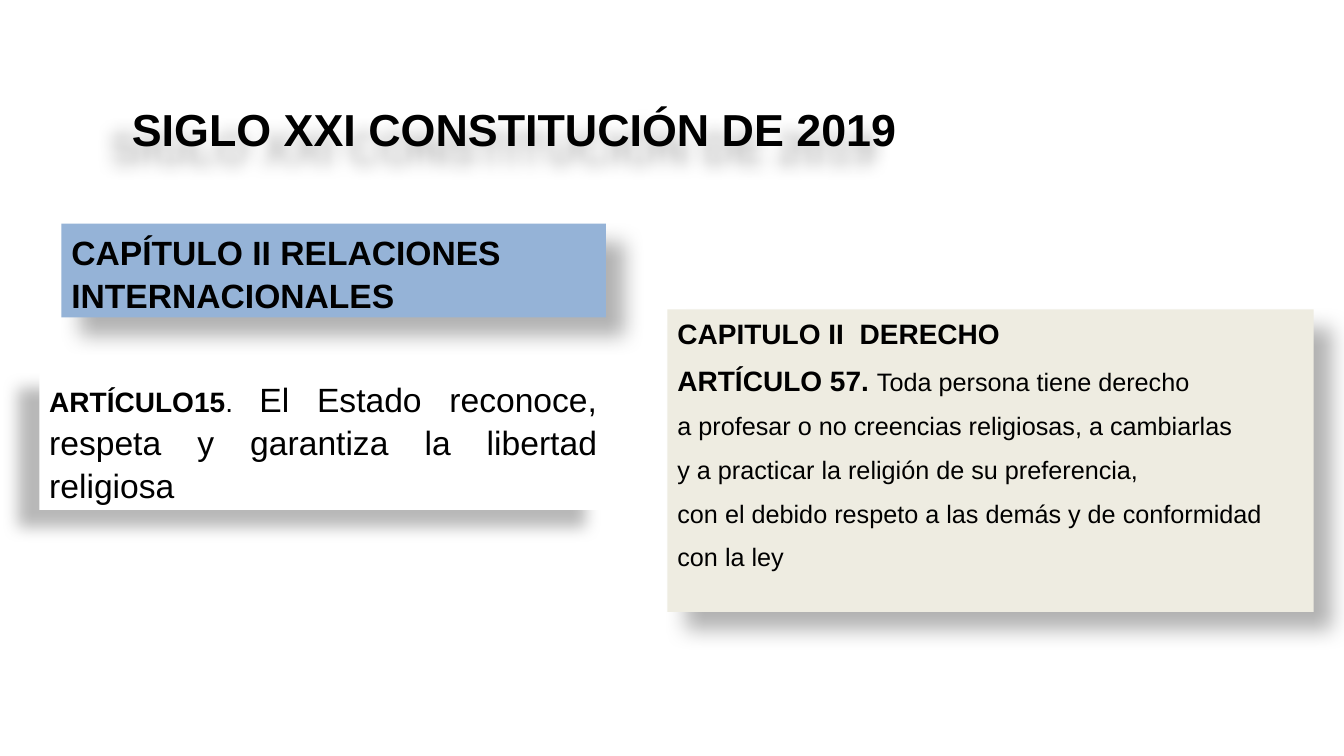
from lxml.etree import SubElement
from pptx import Presentation
from pptx.dml.color import RGBColor
from pptx.enum.shapes import MSO_SHAPE
from pptx.enum.text import MSO_ANCHOR, MSO_AUTO_SIZE, PP_ALIGN
from pptx.oxml.ns import qn
from pptx.util import Inches, Pt

COLORS = {
    "text": "000000",
    "shadow": "000000",
    "white": "FFFFFF",
    "beige": "EEECE1",
    "blue": "95B3D7",
}
# Opacity in percent, blur and distance in points, direction in degrees
SHADOW_RIGHT = (30, 15, 18, 45)
SHADOW_LEFT = (28, 11.8, 19.7, 141)


def add_run(paragraph, text, size=18, bold=False, color="text", font="Arial"):
    run = paragraph.add_run()
    run.text = text
    run.font.name = font
    run.font.size = Pt(size)
    run.font.bold = bold
    run.font.color.rgb = RGBColor.from_string(COLORS[color])


class SlideBuilder:
    def __init__(self, slide):
        self.slide = slide
        self.line_spacing = 1.07
        self.space_after = Pt(8)
        self.hanging = Pt(9.13)

    def panel(self, box, fill, shadow):
        left, top, width, height = map(Inches, box)
        shape = self.slide.shapes.add_shape(
            MSO_SHAPE.RECTANGLE, left, top, width, height)
        shape.fill.solid()
        shape.fill.fore_color.rgb = RGBColor.from_string(COLORS[fill])
        shape.line.fill.background()
        self.cast_shadow(shape, *shadow)
        return self.prepare_text(shape)

    def text_box(self, box, shadow):
        shape = self.slide.shapes.add_textbox(*map(Inches, box))
        self.cast_shadow(shape, *shadow)
        return self.prepare_text(shape)

    def cast_shadow(self, shape, opacity, blur, distance, direction):
        shape.shadow.inherit = False
        effects = shape._element.spPr.find(qn("a:effectLst"))
        outer = SubElement(
            effects, qn("a:outerShdw"), blurRad=str(Pt(blur)),
            dist=str(Pt(distance)), dir=str(direction * 60000),
            algn="tl", rotWithShape="0")
        color = SubElement(outer, qn("a:srgbClr"), val=COLORS["shadow"])
        SubElement(color, qn("a:alpha"), val=str(opacity * 1000))

    def prepare_text(self, shape):
        frame = shape.text_frame
        frame.word_wrap = True
        frame.auto_size = MSO_AUTO_SIZE.SHAPE_TO_FIT_TEXT
        frame.vertical_anchor = MSO_ANCHOR.TOP
        return frame

    def paragraph(self, frame, *runs, align=PP_ALIGN.JUSTIFY, hanging=False):
        """Add a paragraph of (text, size, bold) runs, reusing an empty first one."""
        paragraph = frame.paragraphs[0]
        if paragraph.runs:
            paragraph = frame.add_paragraph()
        paragraph.alignment = align
        paragraph.line_spacing = self.line_spacing
        paragraph.space_after = self.space_after
        if hanging:
            properties = paragraph._p.get_or_add_pPr()
            properties.set("marL", str(self.hanging))
            properties.set("indent", str(-self.hanging))
        for text, size, bold in runs:
            add_run(paragraph, text, size=size, bold=bold)


def main():
    presentation = Presentation()
    presentation.slide_width = Inches(13.33)
    presentation.slide_height = Inches(7.5)
    builder = SlideBuilder(
        presentation.slides.add_slide(presentation.slide_layouts[6]))

    article_15 = builder.panel((0.39, 3.68, 5.63, 1.38), "white", SHADOW_LEFT)
    builder.paragraph(
        article_15, ("ARTÍCULO15", 20, True), (". ", 20, False),
        ("El Estado reconoce, respeta y garantiza la libertad religiosa", 24, False))

    article_57 = builder.panel((6.62, 3.07, 6.41, 3), "beige", SHADOW_RIGHT)
    builder.paragraph(article_57, ("CAPITULO II  DERECHO", 20, True))
    builder.paragraph(
        article_57, ("ARTÍCULO 57. ", 20, True),
        ("Toda persona tiene derecho", 18, False), hanging=True)
    for line in (
        "a profesar o no creencias religiosas, a cambiarlas",
        "y a practicar la religión de su preferencia,",
        "con el debido respeto a las demás y de conformidad",
        "con la ley",
    ):
        builder.paragraph(article_57, (line, 18, False), hanging=True)

    chapter = builder.panel((0.61, 2.22, 5.4, 0.93), "blue", SHADOW_RIGHT)
    builder.paragraph(
        chapter, ("CAPÍTULO II RELACIONES INTERNACIONALES", 24, True),
        align=PP_ALIGN.LEFT)

    title = builder.text_box((1.21, 0.92, 9.17, 0.64), SHADOW_LEFT)
    builder.paragraph(title, ("SIGLO XXI CONSTITUCIÓN DE 2019", 32, True))

    presentation.save("out.pptx")


if __name__ == "__main__":
    main()
